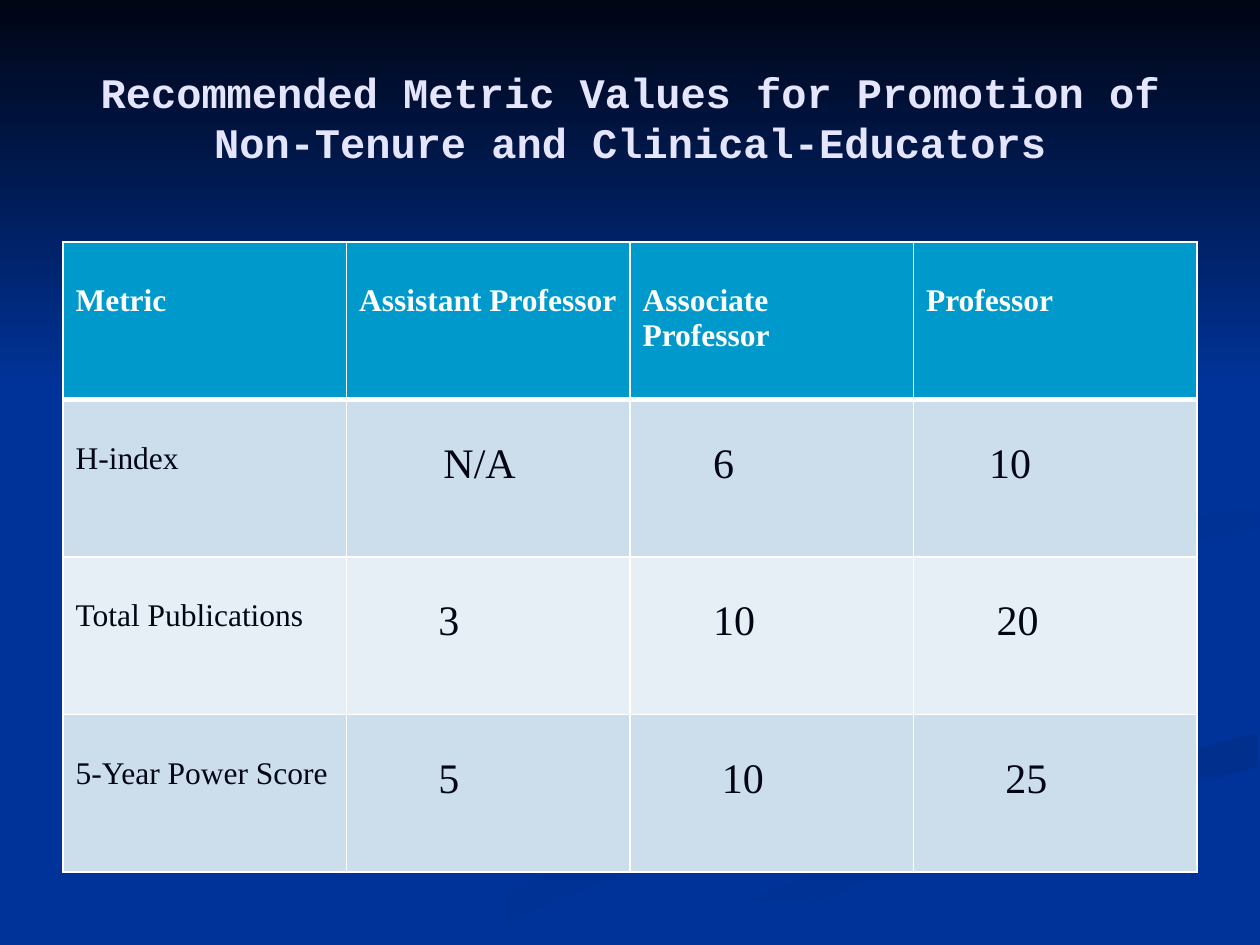
from dataclasses import dataclass

from lxml import etree
from pptx import Presentation
from pptx.dml.color import RGBColor
from pptx.enum import text
from pptx.oxml import ns
from pptx.util import Inches, Pt


@dataclass(frozen=True)
class Theme:
    blue: str = "003399"
    shade: str = "002F8E"
    night: str = "000514"
    title: str = "E5E5FF"
    header: str = "0099CC"
    white: str = "FFFFFF"
    bands: tuple = ("CCDEEC", "E7EFF6")
    title_font: str = "Courier New"
    body_font: str = "Times New Roman"
    label_size: int = 18
    value_size: int = 24


THEME = Theme()

# Each ribbon: start colour, end colour, clockwise angle, outline in inches
RIBBONS = [
    (THEME.blue, THEME.shade, 0, [
        (7.8, 5.53), (5.75, 4.59), (7.86, 5.66), (5.39, 6.49), (3, 7.49),
        (3.61, 7.49), (5.64, 6.65), (8, 5.81)]),
    (THEME.shade, THEME.blue, 90, [
        (5.03, 7.49), (5.71, 7.49), (7.52, 6.72), (9.98, 6.09),
        (9.98, 5.81), (7.64, 6.47)]),
    (THEME.shade, THEME.blue, 45, [
        (7.81, 4.6), (8.26, 4.96), (8.05, 4.72), (8.6, 4.43),
        (9.98, 4.2), (9.98, 4.02), (8.35, 4.3)]),
    (THEME.shade, THEME.blue, 45, [
        (6.83, 4.3), (8.55, 3.91), (8.94, 3.44), (7.62, 2.33), (8.89, 3.35),
        (8.3, 3.82), (5.77, 4.62), (6.22, 5)]),
]
NIGHT_SKY = (THEME.night, THEME.blue, 90, [(0, 0), (0, 3.08), (10, 3.08), (10, 0)])

HEADINGS = ["Metric", "Assistant Professor", "Associate Professor", "Professor"]
# Each value comes with its left indent in inches
METRICS = [
    ("H-index", ("N/A", 0.77), ("6", 0.66), ("10", 0.6)),
    ("Total Publications", ("3", 0.73), ("10", 0.66), ("20", 0.66)),
    ("5-Year Power Score", ("5", 0.73), ("10", 0.73), ("25", 0.73)),
]


def rgb(color):
    return RGBColor.from_string(color)


def add_outline(shapes, start, end, angle, points):
    first, *rest = [(Inches(x), Inches(y)) for x, y in points]
    builder = shapes.build_freeform(*first)
    builder.add_line_segments(rest)
    outline = builder.convert_to_shape()
    outline.shadow.inherit = False
    outline.line.fill.background()
    outline.fill.gradient()
    outline.fill.gradient_angle = (360 - angle) % 360
    for stop, color in zip(outline.fill.gradient_stops, (start, end)):
        stop.color.rgb = rgb(color)


def add_backdrop(slide):
    slide.background.fill.solid()
    slide.background.fill.fore_color.rgb = rgb(THEME.blue)
    swirl = slide.shapes.add_group_shape()
    for outline in RIBBONS + [NIGHT_SKY]:
        add_outline(swirl.shapes, *outline)


def style_paragraph(paragraph, font, size, color, bold=False):
    paragraph.font.name = font
    paragraph.font.size = Pt(size)
    paragraph.font.bold = bold
    paragraph.font.color.rgb = rgb(color)


def place_title(slide, left, top, width, height):
    title = slide.shapes.title
    slide.shapes._spTree.append(title._element)  # bring in front of the backdrop
    title.left, title.top, title.width, title.height = left, top, width, height
    title.text_frame.text = ("Recommended Metric Values for Promotion of "
                             "Non-Tenure and Clinical-Educators")
    title.text_frame.vertical_anchor = text.MSO_ANCHOR.MIDDLE
    heading = title.text_frame.paragraphs[0]
    heading.alignment = text.PP_ALIGN.CENTER
    style_paragraph(heading, THEME.title_font, THEME.value_size, THEME.title, True)


def set_borders(cell, **widths):
    properties = cell._tc.get_or_add_tcPr()
    for side in "LRTB":
        line = etree.SubElement(properties, ns.qn(f"a:ln{side}"),
                                w=str(Pt(widths.get(side, 1))))
        fill = etree.SubElement(line, ns.qn("a:solidFill"))
        etree.SubElement(fill, ns.qn("a:srgbClr"), val=THEME.white)


def fill_cell(cell, words, fill, size, color, indent=0.1, bold=False, **borders):
    set_borders(cell, **borders)
    cell.fill.solid()
    cell.fill.fore_color.rgb = rgb(fill)
    cell.margin_left = Inches(indent)
    cell.margin_top = Inches(0.33)
    cell.text = words
    style_paragraph(cell.text_frame.paragraphs[0], THEME.body_font, size, color, bold)


def add_metric_table(slide, left, top, width, height):
    table = slide.shapes.add_table(len(METRICS) + 1, len(HEADINGS),
                                   left, top, width, height).table
    for column, heading in enumerate(HEADINGS):
        fill_cell(table.cell(0, column), heading, THEME.header,
                  THEME.label_size, THEME.white, bold=True, B=3)
    for row, (metric, *values) in enumerate(METRICS, 1):
        band = THEME.bands[(row - 1) % 2]
        edge = {"T": 3} if row == 1 else {}
        fill_cell(table.cell(row, 0), metric, band,
                  THEME.label_size, THEME.night, **edge)
        for column, (value, indent) in enumerate(values, 1):
            fill_cell(table.cell(row, column), value, band,
                      THEME.value_size, THEME.night, indent, **edge)


def main():
    deck = Presentation()
    deck.slide_width, deck.slide_height = Inches(10), Inches(7.5)
    slide = deck.slides.add_slide(deck.slide_layouts[5])
    add_backdrop(slide)
    place_title(slide, Inches(0.5), Inches(0.3), Inches(9), Inches(1.25))
    add_metric_table(slide, Inches(0.5), Inches(1.92), Inches(9), Inches(5))
    deck.save("out.pptx")


if __name__ == "__main__":
    main()
